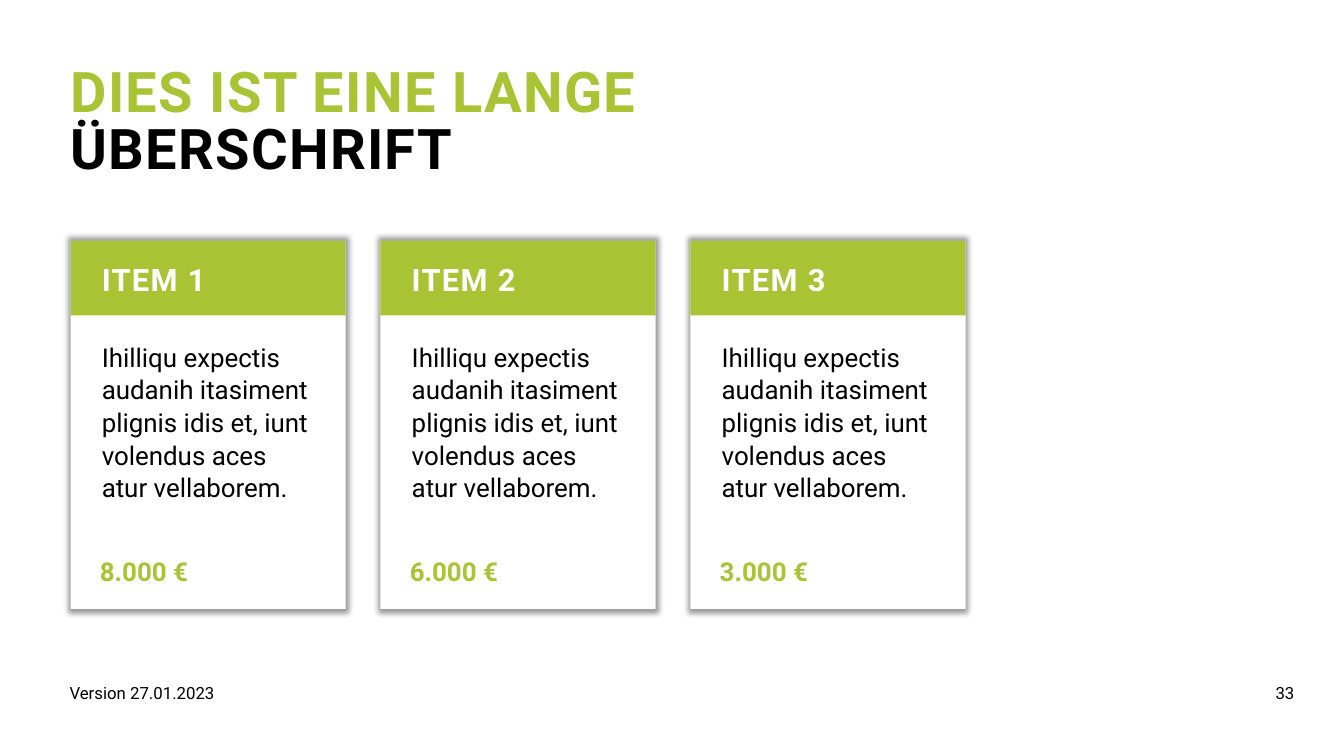
from dataclasses import dataclass

from lxml.etree import SubElement
from pptx import Presentation
from pptx.dml.color import RGBColor
from pptx.enum.shapes import MSO_SHAPE
from pptx.enum.text import MSO_ANCHOR, MSO_AUTO_SIZE, PP_ALIGN
from pptx.oxml.ns import qn
from pptx.util import Pt

COLORS = {"green": "A8C434", "black": "000000", "white": "FFFFFF"}
FONT = "Roboto"

BODY_TEXT = [
    "Ihilliqu expectis audanih itasiment plignis idis et, iunt volendus aces",
    "atur vellaborem.",
]
MARGIN_LEFT = 50.4
CARD_TOP, CARD_STEP = 172.1, 221.4
CARD_WIDTH, CARD_HEIGHT, HEADER_HEIGHT = 196.6, 262.8, 53.3
PRICE_TOP, PRICE_INDENT = 396, 20.9


@dataclass
class Style:
    size: float
    color: str = "black"
    bold: bool = False
    tracking: float = 0
    line_spacing: float = 1.0
    align: PP_ALIGN = PP_ALIGN.LEFT


@dataclass
class Card:
    heading: str
    price: str


TITLE = Style(40, "green", True, 1, 0.85)
HEADING = Style(22, "white", True, 1, 1.05)
BODY = Style(18.5, line_spacing=1.05)
PRICE = Style(18.5, "green", True, line_spacing=1.05)
FOOTER = Style(12)
PAGE_NUMBER = Style(12, align=PP_ALIGN.RIGHT)

CARDS = [
    Card("ITEM 1", "8.000 €"),
    Card("ITEM 2", "6.000 €"),
    Card("ITEM 3", "3.000 €"),
]


def rgb(name: str) -> RGBColor:
    return RGBColor.from_string(COLORS[name])


def add_run(p, text: str, style: Style, color: str = "") -> None:
    r = p.add_run()
    r.text = text
    for name, value in {"name": FONT, "size": Pt(style.size), "bold": style.bold}.items():
        setattr(r.font, name, value)
    r.font.color.rgb = rgb(color or style.color)
    if style.tracking:
        r._r.get_or_add_rPr().set("spc", str(int(style.tracking * 100)))


def format_frame(tf, insets=(0, 0, 0, 0), anchor=MSO_ANCHOR.TOP) -> None:
    """Set wrapping, anchor and the left, top, right and bottom insets in points."""
    left, top, right, bottom = map(Pt, insets)
    settings = {
        "word_wrap": True,
        "auto_size": MSO_AUTO_SIZE.NONE,
        "vertical_anchor": anchor,
        "margin_left": left,
        "margin_top": top,
        "margin_right": right,
        "margin_bottom": bottom,
    }
    for name, value in settings.items():
        setattr(tf, name, value)


def format_paragraph(p, style: Style) -> None:
    p.alignment = style.align
    p.line_spacing = style.line_spacing


def write(tf, lines: list[str], style: Style) -> None:
    for i, line in enumerate(lines):
        p = tf.add_paragraph() if i else tf.paragraphs[0]
        format_paragraph(p, style)
        add_run(p, line, style)


def add_text(slide, box: tuple, text: str, style: Style) -> None:
    tf = slide.shapes.add_textbox(*map(Pt, box)).text_frame
    format_frame(tf)
    write(tf, [text], style)


def add_panel(slide, box: tuple, fill: str, insets: tuple, anchor, lines, style: Style):
    sp = slide.shapes.add_shape(MSO_SHAPE.RECTANGLE, *map(Pt, box))
    sp.shadow.inherit = False
    sp.fill.solid()
    sp.fill.fore_color.rgb = rgb(fill)
    sp.line.fill.background()
    format_frame(sp.text_frame, insets, anchor)
    write(sp.text_frame, lines, style)
    return sp


def add_shadow(sp) -> None:
    """Add a soft shadow that is 2 % larger than the shape."""
    effects = sp._element.spPr.find(qn("a:effectLst"))
    shadow = SubElement(effects, qn("a:outerShdw"), blurRad=str(Pt(4)), sx="102000",
                        sy="102000", algn="ctr", rotWithShape="0")
    color = SubElement(shadow, qn("a:srgbClr"), val=COLORS["black"])
    SubElement(color, qn("a:alpha"), val="40000")


def add_card(slide, left: float, card: Card) -> None:
    panel = add_panel(slide, (left, CARD_TOP, CARD_WIDTH, CARD_HEIGHT), "white",
                      (22.3, 70.6, 20.2, 0), MSO_ANCHOR.TOP, BODY_TEXT, BODY)
    add_shadow(panel)
    add_panel(slide, (left, CARD_TOP, CARD_WIDTH, HEADER_HEIGHT), "green",
              (22.3, 8.6, 8.6, 8.6), MSO_ANCHOR.MIDDLE, [card.heading], HEADING)
    add_text(slide, (left + PRICE_INDENT, PRICE_TOP, 159, 18.7), card.price, PRICE)


def add_title(slide) -> None:
    title = slide.shapes.title
    box = {"left": MARGIN_LEFT, "top": 47.5, "width": 590.4, "height": 80.6}
    for name, value in box.items():
        setattr(title, name, Pt(value))
    format_frame(title.text_frame)
    p = title.text_frame.paragraphs[0]
    format_paragraph(p, TITLE)
    p.space_before = Pt(0)
    add_run(p, "DIES IST EINE LANGE ", TITLE)
    add_run(p, "ÜBERSCHRIFT", TITLE, "black")


def main() -> None:
    prs = Presentation()
    prs.slide_width, prs.slide_height = Pt(960), Pt(540)
    slide = prs.slides.add_slide(prs.slide_layouts[5])
    add_title(slide)
    for i, card in enumerate(CARDS):
        add_card(slide, MARGIN_LEFT + i * CARD_STEP, card)
    add_text(slide, (49.7, 487.4, 592.6, 28.8), "Version 27.01.2023", FOOTER)
    add_text(slide, (763.2, 487.4, 161.4, 28.8), "33", PAGE_NUMBER)
    prs.save("out.pptx")


if __name__ == "__main__":
    main()
